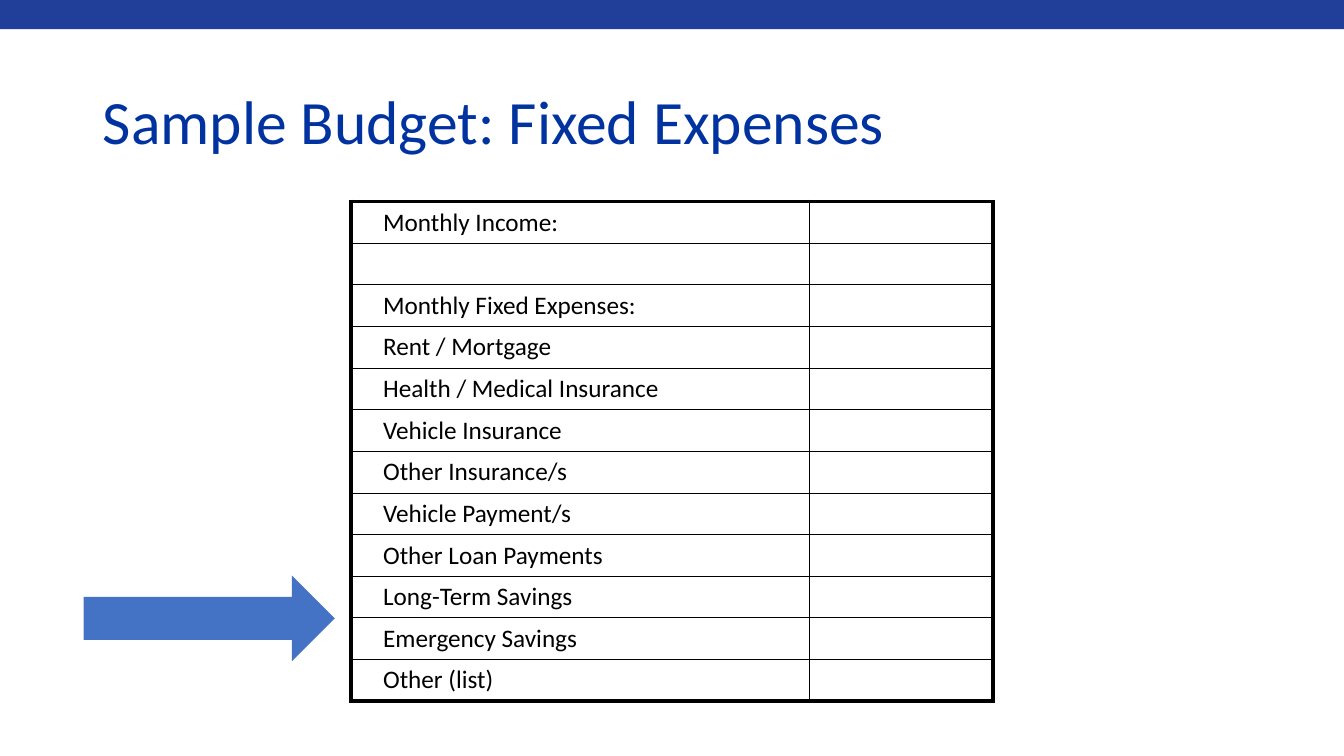
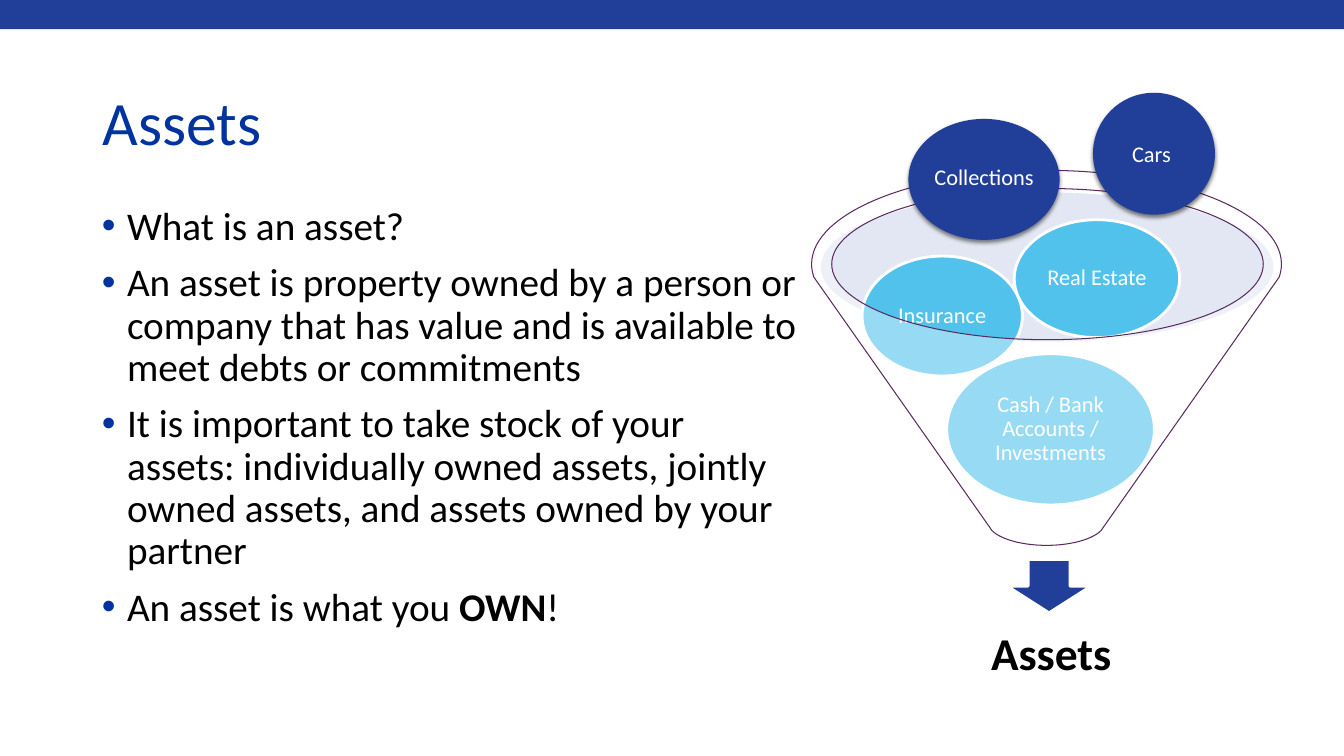
import math

from lxml import etree
from pptx import Presentation
from pptx import util as u
from pptx.dml.color import RGBColor
from pptx.enum import shapes, text
from pptx.oxml import ns

NAVY, TITLE_BLUE, SKY, ARROW_BLUE = "213F98", "0033A0", "51C2EB", "4472C4"
MIST, PLUM, WHITE, BLACK = "BAC5E2", "592C5F", "FFFFFF", "000000"
FONT = "Calibri"
TITLE_ONLY, TITLE_AND_BODY = 5, 1
THIN, THICK = 0.75, 3

BUDGET_ROWS = [
    "Monthly Income:", "", "Monthly Fixed Expenses:", "Rent / Mortgage",
    "Health / Medical Insurance", "Vehicle Insurance", "Other Insurance/s",
    "Vehicle Payment/s", "Other Loan Payments", "Long-Term Savings",
    "Emergency Savings", "Other (list)",
]
ASSET_POINTS = [
    [("What is an asset?", False)],
    [("An asset is property owned by a person or company that has value "
      "and is available to meet debts or commitments", False)],
    [("It is important to take stock of your assets: individually owned "
      "assets, jointly owned assets, and assets owned by your partner", False)],
    [("An asset is what you ", False), ("OWN", True), ("!", False)],
]
ASSETS_IN_FUNNEL = [
    ("Cash / Bank Accounts / Investments", (9.39, 3.51, 2.06, 1.5)),
    ("Insurance", (8.55, 2.54, 1.59, 1.19)),
    ("Real Estate", (10.06, 2.18, 1.64, 1.17)),
]
ASSETS_ABOVE_FUNNEL = [
    ("Collections", (9.01, 1.18, 1.5, 1.2), 0.05),
    ("Cars ", (10.84, 0.92, 1.21, 1.21), 0),
]


def color(hex_value):
    return RGBColor.from_string(hex_value)


def box(bounds):
    return [u.Inches(length) for length in bounds]


def child(parent, tag, **attributes):
    element = etree.SubElement(parent, ns.qn(tag))
    for key, value in attributes.items():
        element.set(key, str(value))
    return element


def add_solid(parent, hex_value):
    child(child(parent, "a:solidFill"), "a:srgbClr", val=hex_value)


def arc(center, radii, stops):
    """Start point and Bézier segments of an ellipse through stops in degrees."""
    def at(angle, pull=0):
        x = math.cos(angle) - pull * math.sin(angle)
        y = math.sin(angle) + pull * math.cos(angle)
        return (u.Inches(center[0] + radii[0] * x),
                u.Inches(center[1] + radii[1] * y))

    angles = [math.radians(stop) for stop in stops]
    segments = []
    for start, end in zip(angles, angles[1:]):
        pull = 4 / 3 * math.tan((end - start) / 4)
        segments.append([at(start, pull), at(end, -pull), at(end)])
    return at(angles[0]), segments


class Deck:
    def __init__(self):
        self.file = Presentation()
        self.file.slide_width, self.file.slide_height = box((13.33, 7.5))
        self.slide = None

    def new_slide(self, layout, title, title_top):
        self.slide = self.file.slides.add_slide(self.file.slide_layouts[layout])
        self.shape(shapes.MSO_SHAPE.RECTANGLE, (0, -0.02, 13.33, 0.31), NAVY)
        heading = self.slide.shapes.title
        self.place(heading, (0.92, title_top, 11.5, 0.95))
        heading.text_frame.vertical_anchor = text.MSO_ANCHOR.MIDDLE
        paragraph = heading.text_frame.paragraphs[0]
        paragraph.alignment = text.PP_ALIGN.LEFT
        paragraph.line_spacing = 0.9
        self.run(paragraph, title, 44, TITLE_BLUE)

    def place(self, item, bounds):
        item.left, item.top, item.width, item.height = box(bounds)
        item.text_frame.auto_size = text.MSO_AUTO_SIZE.NONE

    def run(self, paragraph, words, size, hex_value=BLACK, bold=False):
        run = paragraph.add_run()
        run.text = words
        run.font.name, run.font.size, run.font.bold = FONT, u.Pt(size), bold
        run.font.color.rgb = color(hex_value)

    def paint(self, shape, fill, line=None, width=2, opacity=100):
        shape.shadow.inherit = False
        shape.fill.solid()
        shape.fill.fore_color.rgb = color(fill)
        if opacity < 100:
            fill_color = shape.element.spPr.find(".//" + ns.qn("a:srgbClr"))
            child(fill_color, "a:alpha", val=opacity * 1000)
        if line:
            shape.line.color.rgb = color(line)
            shape.line.width = u.Pt(width)
        else:
            shape.line.fill.background()

    def shape(self, kind, bounds, fill, line=None, opacity=100):
        shape = self.slide.shapes.add_shape(kind, *box(bounds))
        self.paint(shape, fill, line, opacity=opacity)
        return shape

    def bubble(self, label, bounds, fill, line=None, spacing=1.0, lift=0):
        bubble = self.shape(shapes.MSO_SHAPE.OVAL, bounds, fill, line)
        frame = bubble.text_frame
        frame.word_wrap = True
        frame.vertical_anchor = text.MSO_ANCHOR.MIDDLE
        frame.margin_left = frame.margin_right = frame.margin_top = 0
        frame.margin_bottom = u.Inches(lift)
        paragraph = frame.paragraphs[0]
        paragraph.alignment = text.PP_ALIGN.CENTER
        paragraph.line_spacing = spacing
        self.run(paragraph, label, 16, WHITE)
        return bubble

    def drop_shadow(self, shape):
        effects = shape.element.spPr.find(ns.qn("a:effectLst"))
        shadow = child(effects, "a:outerShdw", blurRad=u.Pt(3), dist=u.Pt(2),
                       dir=90 * 60000, rotWithShape=0)
        child(child(shadow, "a:srgbClr", val=BLACK), "a:alpha", val=50000)

    def outline(self, contours, fill, line, width, opacity):
        """Draw closed contours as one shape; three-point segments are curves."""
        builder = self.slide.shapes.build_freeform(*contours[0][0], scale=1.0)
        for index, (start, segments) in enumerate(contours):
            if index:
                builder.move_to(*start)
            builder.add_line_segments(sum(segments, []), close=True)
        shape = builder.convert_to_shape()
        strokes = iter(list(shape.element.spPr.iter(ns.qn("a:lnTo"))))
        for _, segments in contours:
            for segment in segments:
                group = [next(strokes) for _ in segment]
                if len(group) == 3:
                    curve = etree.Element(ns.qn("a:cubicBezTo"))
                    group[0].addprevious(curve)
                    for stroke in group:
                        curve.append(stroke[0])
                        stroke.getparent().remove(stroke)
        self.paint(shape, fill, line, width, opacity)

    def caption(self, words, bounds, size):
        caption = self.slide.shapes.add_textbox(*box(bounds))
        frame = caption.text_frame
        frame.word_wrap = True
        frame.vertical_anchor = text.MSO_ANCHOR.MIDDLE
        frame.margin_left = frame.margin_right = u.Inches(0.25)
        frame.paragraphs[0].line_spacing = 0.9
        self.run(frame.paragraphs[0], words, size, bold=True)

    def bullets(self, points, bounds):
        body = self.slide.placeholders[1]
        self.place(body, bounds)
        frame = body.text_frame
        for index, point in enumerate(points):
            paragraph = frame.add_paragraph() if index else frame.paragraphs[0]
            paragraph.line_spacing = 0.9
            paragraph.space_before = u.Pt(10)
            properties = paragraph._p.get_or_add_pPr()
            properties.set("marL", str(u.Inches(0.25)))
            properties.set("indent", str(-u.Inches(0.25)))
            child(child(properties, "a:buClr"), "a:srgbClr", val=TITLE_BLUE)
            child(properties, "a:buFont", typeface="Arial")
            child(properties, "a:buChar", char="•")
            for words, bold in point:
                self.run(paragraph, words, 28, bold=bold)

    def borders(self, cell, widths):
        """Set cell borders; widths are points for left, right, top, bottom."""
        properties = cell._tc.get_or_add_tcPr()
        for index, (side, width) in enumerate(zip("LRTB", widths)):
            line = child(properties, "a:ln" + side, w=u.Pt(width))
            add_solid(line, BLACK)
            properties.insert(index, line)

    def form(self, labels, bounds, column_widths):
        """Add a table with labels on the left and blanks on the right."""
        table = self.slide.shapes.add_table(
            len(labels), len(column_widths), *box(bounds)).table
        table.first_row = table.horz_banding = False
        for column, width in zip(table.columns, column_widths):
            column.width = u.Inches(width)
        last_row, last_column = len(labels) - 1, len(column_widths) - 1
        for r, label in enumerate(labels):
            for c in range(len(column_widths)):
                cell = table.cell(r, c)
                cell.fill.background()
                cell.vertical_anchor = text.MSO_ANCHOR.MIDDLE
                cell.margin_left = cell.margin_right = u.Inches(0.03)
                cell.margin_top = cell.margin_bottom = u.Inches(0.03)
                on_edge = (c == 0, c == last_column, r == 0, r == last_row)
                self.borders(cell, [THICK if e else THIN for e in on_edge])
            if label:
                paragraph = table.cell(r, 0).text_frame.paragraphs[0]
                paragraph._p.get_or_add_pPr().set("marL", str(u.Inches(0.29)))
                self.run(paragraph, label, 18)


def budget_slide(deck):
    deck.new_slide(TITLE_ONLY, "Sample Budget: Fixed Expenses", 0.76)
    deck.form(BUDGET_ROWS, (3.48, 2, 6.37, 4.96), (4.55, 1.82))
    deck.shape(shapes.MSO_SHAPE.RIGHT_ARROW, (0.83, 5.71, 2.49, 0.85), ARROW_BLUE)


def assets_slide(deck):
    deck.new_slide(TITLE_AND_BODY, "Assets", 0.77)
    deck.bullets(ASSET_POINTS, (0.91, 2, 7.1, 4.84))
    deck.shape(shapes.MSO_SHAPE.OVAL, (8.14, 1.91, 4.49, 1.48), MIST, opacity=40)
    deck.shape(shapes.MSO_SHAPE.DOWN_ARROW, (9.99, 5.55, 0.83, 0.53), NAVY, WHITE)
    deck.caption("Assets", (9.58, 6.01, 4, 1), 32.5)
    for label, bounds in ASSETS_IN_FUNNEL:
        deck.bubble(label, bounds, SKY, WHITE, spacing=0.9)

    rim_start, rim = arc((10.38, 2.62), (2.33, 0.93), (172, 180, 270, 360, 368))
    spout_start, spout = arc((10.38, 5.18), (0.58, 0.23), (10, 90, 170))
    mouth = arc((10.39, 2.62), (2.14, 0.75), (180, 90, 0, -90, -180))
    cone = rim_start, rim + [[spout_start]] + spout
    deck.outline([cone, mouth], WHITE, PLUM, 0.75, opacity=40)

    for label, bounds, lift in ASSETS_ABOVE_FUNNEL:
        deck.drop_shadow(deck.bubble(label, bounds, NAVY, lift=lift))


def main():
    deck = Deck()
    budget_slide(deck)
    assets_slide(deck)
    deck.file.save("out.pptx")


if __name__ == "__main__":
    main()
